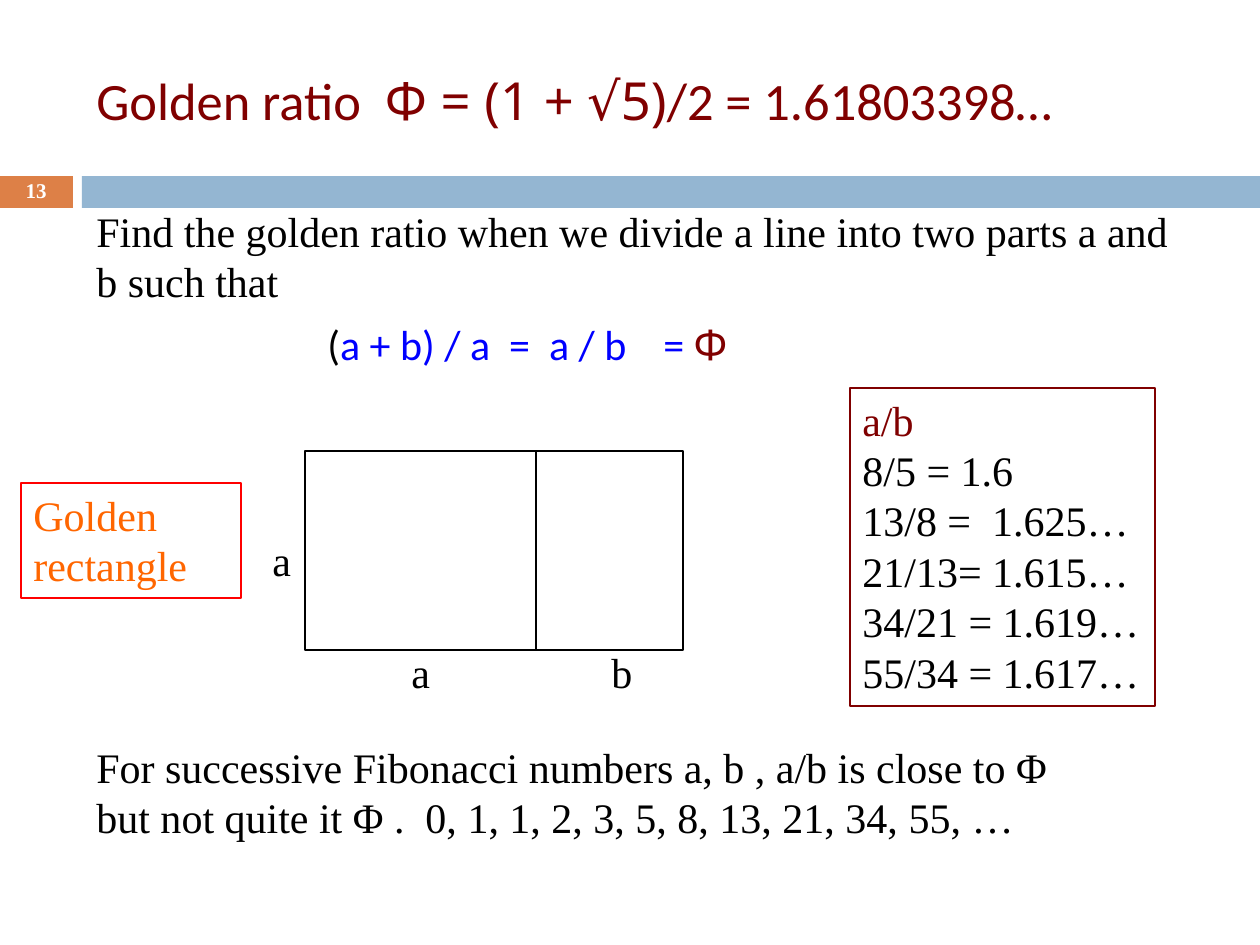
from lxml import etree
from pptx import Presentation
from pptx.dml.color import RGBColor
from pptx.enum.shapes import MSO_SHAPE
from pptx.enum.text import MSO_ANCHOR, MSO_AUTO_SIZE, PP_ALIGN
from pptx.oxml.ns import qn
from pptx.util import Pt

RECT = MSO_SHAPE.RECTANGLE
MIDDLE, TOP = MSO_ANCHOR.MIDDLE, MSO_ANCHOR.TOP
LEFT, CENTER = PP_ALIGN.LEFT, PP_ALIGN.CENTER
FIT, FIXED = MSO_AUTO_SIZE.SHAPE_TO_FIT_TEXT, MSO_AUTO_SIZE.NONE
SANS, SYMBOL, SERIF = "Calibri", "Noto Sans", "Times New Roman"
COLORS = {
    "orange_bar": "DD8047", "blue_bar": "94B6D2", "maroon": "800000",
    "black": "000000", "white": "FFFFFF", "blue": "0000FF",
    "red": "FF0000", "orange": "FF6600",
}


def px(n):
    return round(n * 914400 / 126)


def color(name):
    return RGBColor.from_string(COLORS[name])


class Deck:
    def __init__(self):
        self.prs = Presentation()
        self.prs.slide_width, self.prs.slide_height = px(1260), px(945)
        self.s = self.prs.slides.add_slide(self.prs.slide_layouts[6])

    def rect(self, x, y, w, h, fill=None, line=None, width=0.75):
        sp = self.s.shapes.add_shape(RECT, px(x), px(y), px(w), px(h))
        sp.shadow.inherit = False
        if fill:
            sp.fill.solid()
            sp.fill.fore_color.rgb = color(fill)
        else:
            sp.fill.background()
        if line:
            sp.line.color.rgb = color(line)
            sp.line.width = Pt(width)
        else:
            sp.line.fill.background()
        return sp

    def box(self, x, y, w, h):
        return self.s.shapes.add_textbox(px(x), px(y), px(w), px(h))

    def text(self, sp, paragraphs, size=24, wrap=True, fit=False,
             anchor=TOP, align=LEFT, bold=False, right=13):
        tf = sp.text_frame
        tf.word_wrap = wrap
        tf.auto_size = FIT if fit else FIXED
        tf.vertical_anchor = anchor
        tf.margin_right = px(right)
        for i, runs in enumerate(paragraphs):
            p = tf.add_paragraph() if i else tf.paragraphs[0]
            p.alignment = align
            for text, font, ink in runs:
                r = p.add_run()
                r.text = text
                r.font.name = font
                r.font.size = Pt(size)
                r.font.bold = bold
                r.font.color.rgb = color(ink)
        return tf

    def label(self, text, x, y):
        self.text(self.box(x, y, 45, 63), [[(text, SERIF, "black")]],
                  wrap=False, fit=True)

    def indent_and_tab(self, p, indent, tab):
        pPr = p._p.get_or_add_pPr()
        pPr.set("marL", "0")
        pPr.set("indent", str(px(indent)))
        tabs = etree.SubElement(pPr, qn("a:tabLst"))
        etree.SubElement(tabs, qn("a:tab"), pos=str(px(tab)), algn="l")


def main():
    d = Deck()
    d.rect(0, 176, 73, 32, fill="orange_bar")
    d.rect(82, 176, 1178, 32, fill="blue_bar")

    d.text(d.box(84, 32, 1176, 136), [[
        ("Golden ratio  ", SANS, "maroon"),
        ("Φ = (1 + √5)", SYMBOL, "maroon"),
        ("/2 = 1.61803398…", SANS, "maroon"),
    ]], size=30, anchor=MIDDLE, right=18)

    tf = d.text(d.box(0, 175, 73, 34), [[("13", SERIF, "white")]],
                size=12, anchor=MIDDLE, align=CENTER, bold=True)
    tf.paragraphs[0].line_spacing = 0.8

    tf = d.text(d.box(84, 199, 1124, 199), [
        [("Find the golden ratio when we divide a line into two parts "
          "a and b such that", SERIF, "black")],
        [("(", SANS, "black"),
         ("a + b) / a  =  a / b\t= ", SANS, "blue"),
         ("Φ", SYMBOL, "maroon")],
    ], right=18)
    for p in tf.paragraphs:
        p.space_before = Pt(7)
    d.indent_and_tab(tf.paragraphs[1], 231, 644)

    d.text(d.box(84, 735, 984, 115), [[(text, SERIF, "black")] for text in (
        "For successive Fibonacci numbers a, b , a/b is close to Φ",
        "but not quite it Φ .  0, 1, 1, 2, 3, 5, 8, 13, 21, 34, 55, …",
    )], wrap=False, fit=True)

    for x, w in ((305, 231), (536, 147)):
        d.rect(x, 451, w, 199, line="black", width=0.79)
    for text, x, y in (("a", 260, 528), ("a", 399, 640), ("b", 599, 640)):
        d.label(text, x, y)

    d.text(d.rect(21, 483, 220, 115, line="red"),
           [[("Golden rectangle", SERIF, "orange")]], fit=True)

    ratios = ("8/5 = 1.6", "13/8 =  1.625…", "21/13= 1.615…",
              "34/21 = 1.619…", "55/34 = 1.617…")
    d.text(d.rect(850, 388, 305, 318, line="maroon"),
           [[("a/b", SERIF, "maroon")]]
           + [[(text, SERIF, "black")] for text in ratios],
           wrap=False, fit=True)

    d.prs.save("out.pptx")


if __name__ == "__main__":
    main()
